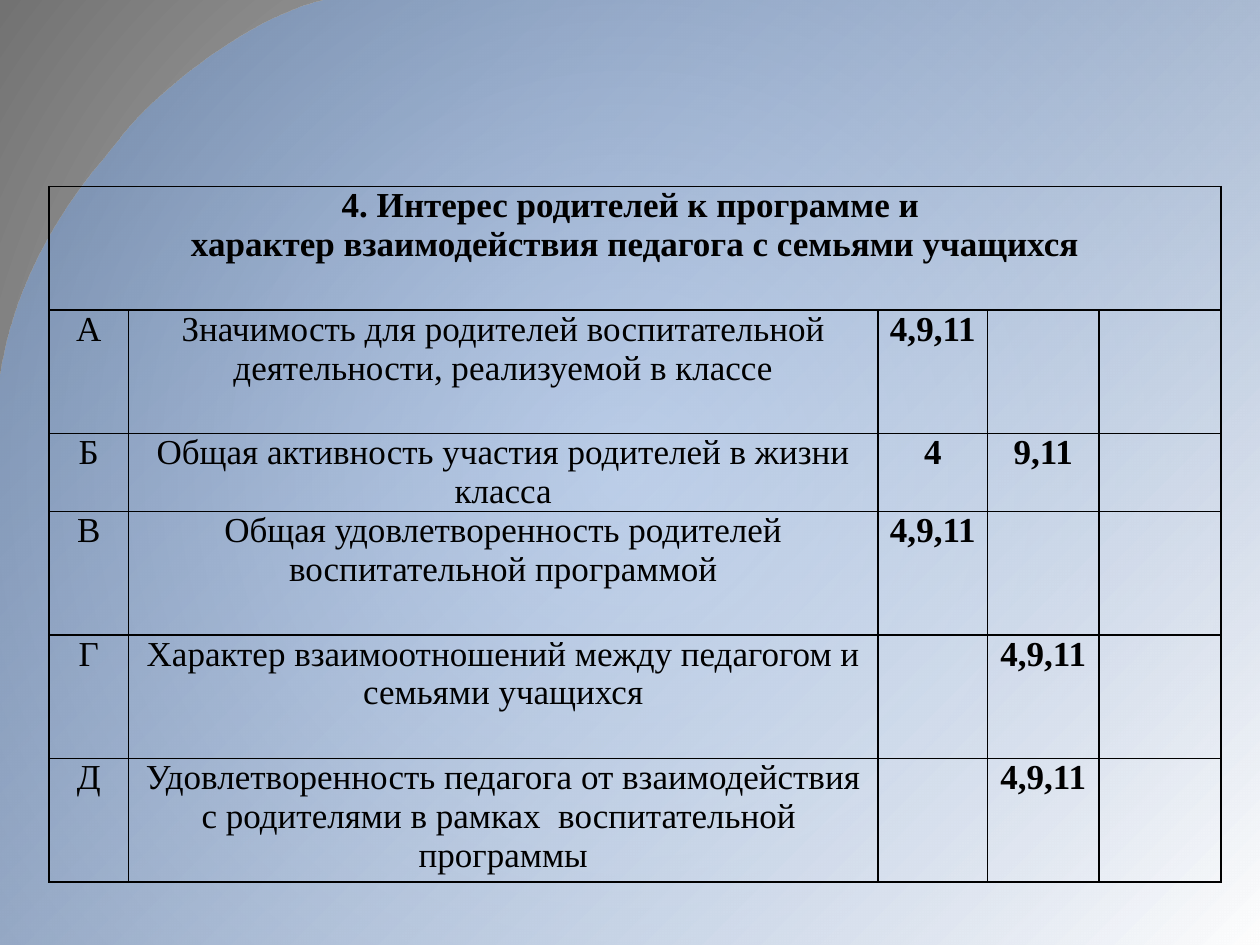
from dataclasses import dataclass

from lxml.etree import SubElement
from pptx import Presentation
from pptx.dml.color import RGBColor
from pptx.enum.text import PP_ALIGN as Align
from pptx.oxml.ns import qn
from pptx.util import Cm, Pt

COLORS = {
    "ink": "000000",
    "center": "CFCFCF",
    "edge": "727272",
    "blue": "699DE9",
    "white": "FFFFFF",
}
FONT = "Times New Roman"
WIDTH, HEIGHT = 25.4, 19.05
COLUMN_WIDTHS = [1.6, 15.11, 2.21, 2.24, 2.46]
ROW_HEIGHT, SHORT_ROW_HEIGHT = 2.49, 1.24
HEADING = (
    "4. Интерес родителей к программе и \n"
    "характер взаимодействия педагога с семьями учащихся"
)


@dataclass
class Criterion:
    letter: str
    wording: str
    marks: tuple[str, str, str]
    height: float = ROW_HEIGHT


@dataclass
class Stop:
    color: str
    position: int
    opacity: int = 100


CRITERIA = [
    Criterion("А", "Значимость для родителей воспитательной деятельности, "
              "реализуемой в классе", ("4,9,11", "", "")),
    Criterion("Б", "Общая активность участия родителей в жизни класса",
              ("4", "9,11", ""), SHORT_ROW_HEIGHT),
    Criterion("В", "Общая удовлетворенность родителей воспитательной программой",
              ("4,9,11", "", "")),
    Criterion("Г", "Характер взаимоотношений между педагогом и семьями учащихся",
              ("", "4,9,11", "")),
    Criterion("Д", "Удовлетворенность педагога от взаимодействия с родителями "
              "в рамках  воспитательной  программы", ("", "4,9,11", "")),
]

# Bezier segments of the curved edge, in centimetres: two controls and an end
CURVE_START = (6.55, 0)
CURVE = [
    ((4.83, 0.41), (2.95, 2.11), (2.49, 2.72)),
    ((2.03, 3.35), (0.41, 4.93), (0, 7.65)),
]


def add_gradient(properties, stops: list[Stop], angle: int | None = None) -> None:
    """Replace the solid fill by a linear gradient, or a circular one without angle."""
    solid = properties.find(qn("a:solidFill"))
    gradient = solid.makeelement(qn("a:gradFill"), {"rotWithShape": "1"})
    stop_list = SubElement(gradient, qn("a:gsLst"))
    for stop in stops:
        mark = SubElement(stop_list, qn("a:gs"), pos=str(stop.position * 1000))
        color = SubElement(mark, qn("a:srgbClr"), val=COLORS[stop.color])
        if stop.opacity < 100:
            SubElement(color, qn("a:alpha"), val=str(stop.opacity * 1000))
    if angle is None:
        circle = SubElement(gradient, qn("a:path"), path="circle")
        SubElement(circle, qn("a:fillToRect"), dict.fromkeys("ltrb", "50000"))
    else:
        SubElement(gradient, qn("a:lin"), ang=str(angle * 60000), scaled="0")
    properties.replace(solid, gradient)


def curve_points(steps: int = 24) -> list[tuple[float, float]]:
    points = []
    start = CURVE_START
    for first, second, end in CURVE:
        for step in range(1, steps + 1):
            t = step / steps
            weights = ((1 - t) ** 3, 3 * t * (1 - t) ** 2, 3 * t**2 * (1 - t), t**3)
            anchors = (start, first, second, end)
            points.append(tuple(
                sum(w * anchor[axis] for w, anchor in zip(weights, anchors))
                for axis in (0, 1)
            ))
        start = end
    return points


def draw_backdrop(slide) -> None:
    slide.background.fill.solid()
    add_gradient(slide.element.find(".//" + qn("p:bgPr")),
                 [Stop("center", 0), Stop("edge", 100)])

    outline = curve_points() + [(0, HEIGHT), (WIDTH, HEIGHT), (WIDTH, 0)]
    builder = slide.shapes.build_freeform(*(Cm(v) for v in CURVE_START))
    builder.add_line_segments([(Cm(x), Cm(y)) for x, y in outline], close=True)
    sweep = builder.convert_to_shape()
    sweep.shadow.inherit = False
    sweep.line.fill.background()
    sweep.fill.solid()
    add_gradient(sweep.element.spPr,
                 [Stop("blue", 0, opacity=39), Stop("white", 100)], angle=45)


def add_borders(cell) -> None:
    properties = cell._tc.get_or_add_tcPr()
    for side in ("lnL", "lnR", "lnT", "lnB"):
        border = SubElement(properties, qn(f"a:{side}"), w=str(Pt(1)))
        fill = SubElement(border, qn("a:solidFill"))
        SubElement(fill, qn("a:srgbClr"), val=COLORS["ink"])


def write_cell(cell, text: str, bold: bool) -> None:
    cell.text_frame.text = text
    cell.margin_left = cell.margin_right = Cm(0.18)
    cell.margin_top = cell.margin_bottom = 0
    for paragraph in cell.text_frame.paragraphs:
        paragraph.alignment = Align.CENTER
        for run in paragraph.runs:
            run.font.name = FONT
            run.font.size = Pt(20)
            run.font.bold = bold
            run.font.color.rgb = RGBColor.from_string(COLORS["ink"])


def draw_table(slide) -> None:
    heights = [ROW_HEIGHT] + [criterion.height for criterion in CRITERIA]
    table = slide.shapes.add_table(
        len(heights), len(COLUMN_WIDTHS), Cm(0.99), Cm(3.76),
        Cm(sum(COLUMN_WIDTHS)), Cm(sum(heights)),
    ).table
    table.first_row = table.horz_banding = False
    for column, width in zip(table.columns, COLUMN_WIDTHS):
        column.width = Cm(width)
    for row, height in zip(table.rows, heights):
        row.height = Cm(height)
    for cell in table.iter_cells():
        add_borders(cell)
        cell.fill.background()

    heading = table.cell(0, 0)
    heading.merge(table.cell(0, len(COLUMN_WIDTHS) - 1))
    write_cell(heading, HEADING, bold=True)
    for row, criterion in enumerate(CRITERIA, start=1):
        texts = (criterion.letter, criterion.wording, *criterion.marks)
        for column, text in enumerate(texts):
            write_cell(table.cell(row, column), text, bold=column > 1)


def main() -> None:
    presentation = Presentation()
    presentation.slide_width, presentation.slide_height = Cm(WIDTH), Cm(HEIGHT)
    slide = presentation.slides.add_slide(presentation.slide_layouts[6])
    draw_backdrop(slide)
    draw_table(slide)
    presentation.save("out.pptx")


if __name__ == "__main__":
    main()
